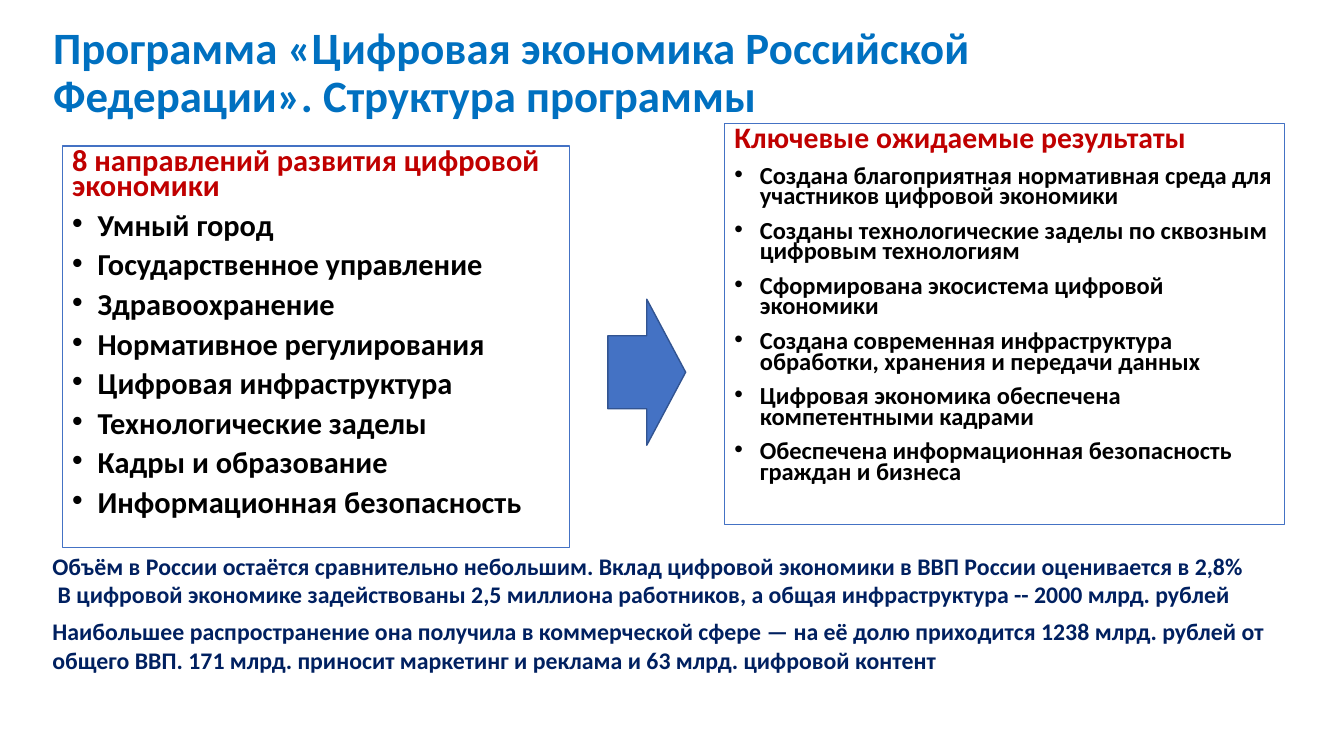
"""Build the slide on the structure of the digital economy programme."""
from dataclasses import dataclass

from lxml.etree import SubElement
from pptx import Presentation
from pptx.dml.color import RGBColor as Rgb
from pptx.enum.shapes import MSO_SHAPE as Preset
from pptx.enum.text import MSO_ANCHOR as Anchor, PP_ALIGN as Align
from pptx.oxml.ns import qn
from pptx.shapes.autoshape import Shape
from pptx.slide import Slide
from pptx.text.text import TextFrame
from pptx.util import Cm, Pt

COLORS = {
    "title": "0070C0",
    "heading": "C00000",
    "item": "000000",
    "note": "002060",
    "accent": "4472C4",
    "arrow_edge": "325491",
}
FONT = "Calibri"


@dataclass(frozen=True)
class Box:
    """Position and size in centimetres."""

    left: float
    top: float
    width: float
    height: float

    def lengths(self) -> tuple[Cm, Cm, Cm, Cm]:
        """Return the four values as lengths."""
        return Cm(self.left), Cm(self.top), Cm(self.width), Cm(self.height)


@dataclass(frozen=True)
class Panel:
    """A framed heading with a bulleted list."""

    box: Box
    heading: str
    heading_size: float
    items: tuple[str, ...]
    item_size: float


PANELS = (
    Panel(
        Box(1.57, 3.68, 12.78, 10.11),
        "8 направлений развития цифровой экономики",
        21.7,
        (
            "Умный город",
            "Государственное управление",
            "Здравоохранение",
            "Нормативное регулирования",
            "Цифровая инфраструктура",
            "Технологические заделы",
            "Кадры и образование",
            "Информационная безопасность",
        ),
        21.7,
    ),
    Panel(
        Box(18.26, 3.12, 14.12, 10.11),
        "Ключевые ожидаемые результаты",
        21.2,
        (
            "Создана благоприятная нормативная среда для участников цифровой экономики",
            "Созданы технологические заделы по сквозным цифровым технологиям",
            "Сформирована экосистема цифровой экономики",
            "Создана современная инфраструктура обработки, хранения и передачи данных",
            "Цифровая экономика обеспечена компетентными кадрами",
            "Обеспечена информационная безопасность граждан и бизнеса",
        ),
        17.5,
    ),
)

TITLE = "Программа «Цифровая экономика Российской Федерации». Структура программы"
NOTES = (
    ("Объём в России остаётся сравнительно небольшим. "
     "Вклад цифровой экономики в ВВП России оценивается в 2,8%", 0),
    (" В цифровой экономике задействованы 2,5 миллиона работников, "
     "а общая инфраструктура -- 2000 млрд. рублей", 0),
    ("Наибольшее распространение она получила в коммерческой сфере — "
     "на её долю приходится 1238 млрд. рублей от общего ВВП. "
     "171 млрд. приносит маркетинг и реклама и 63 млрд. цифровой контент", 6),
)


def write(frame: TextFrame, text: str, *, size: float, color: str,
          spacing: float = 1.0, before: float = 0, bullet: bool = False) -> None:
    """Add one bold paragraph, filling the first one while it is empty."""
    first = frame.paragraphs[0]
    paragraph = frame.add_paragraph() if first.runs else first
    paragraph.alignment = Align.LEFT
    paragraph.line_spacing = spacing
    paragraph.space_before = Pt(before)
    if bullet:
        properties = paragraph._p.get_or_add_pPr()
        indent = Cm(0.64)
        properties.set("marL", str(indent))
        properties.set("indent", str(-indent))
        SubElement(properties, qn("a:buFont")).set("typeface", "Arial")
        SubElement(properties, qn("a:buChar")).set("char", "•")
    run = paragraph.add_run()
    run.text = text
    run.font.name = FONT
    run.font.size = Pt(size)
    run.font.bold = True
    run.font.color.rgb = Rgb.from_string(COLORS[color])


def add_text_area(slide: Slide, box: Box) -> TextFrame:
    """Add a wrapping text box and return its frame."""
    frame = slide.shapes.add_textbox(*box.lengths()).text_frame
    frame.word_wrap = True
    return frame


def add_outlined(slide: Slide, preset: Preset, box: Box, edge: str, weight: float) -> Shape:
    """Add an unfilled preset shape with a plain outline."""
    outlined = slide.shapes.add_shape(preset, *box.lengths())
    outlined.shadow.inherit = False
    outlined.fill.background()
    outlined.line.color.rgb = Rgb.from_string(COLORS[edge])
    outlined.line.width = Pt(weight)
    return outlined


def draw_panel(slide: Slide, panel: Panel) -> None:
    """Draw a framed list with its heading."""
    frame = add_outlined(slide, Preset.RECTANGLE, panel.box, "accent", 0.75).text_frame
    frame.word_wrap = True
    frame.vertical_anchor = Anchor.TOP
    write(frame, panel.heading, size=panel.heading_size, color="heading",
          spacing=0.7, before=10)
    for item in panel.items:
        write(frame, item, size=panel.item_size, color="item",
              spacing=0.7, before=10, bullet=True)


def main() -> None:
    """Create and save the slide."""
    deck = Presentation()
    deck.slide_width, deck.slide_height = Cm(33.87), Cm(19.05)
    slide = deck.slides.add_slide(deck.slide_layouts[6])

    title = add_text_area(slide, Box(1.09, 0.64, 29.21, 3.68))
    title.margin_top = 0
    write(title, TITLE, size=32, color="title", spacing=0.9)

    for panel in PANELS:
        draw_panel(slide, panel)

    arrow = add_outlined(slide, Preset.RIGHT_ARROW, Box(15.32, 7.54, 1.96, 3.68),
                         "arrow_edge", 1)
    arrow.fill.solid()
    arrow.fill.fore_color.rgb = Rgb.from_string(COLORS["accent"])

    notes = add_text_area(slide, Box(1.07, 13.77, 31.75, 3.38))
    for note, before in NOTES:
        write(notes, note, size=17, color="note", before=before)

    deck.save("out.pptx")


if __name__ == "__main__":
    main()
